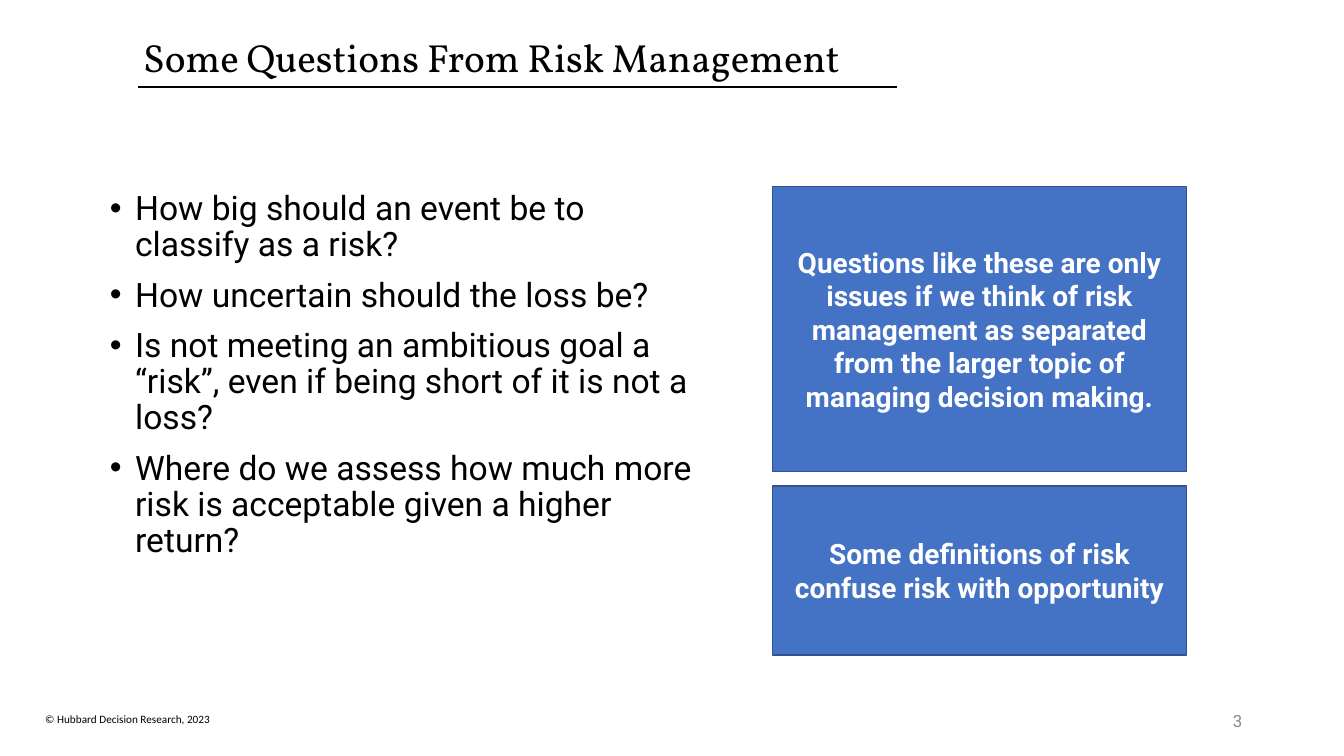
"""Build the slide of questions from risk management."""
from dataclasses import dataclass

from lxml import etree
from pptx import Presentation
from pptx.dml.color import RGBColor
from pptx.enum import shapes, text
from pptx.oxml import ns
from pptx.util import Inches, Pt

BLACK, WHITE, GREY = "000000", "FFFFFF", "888888"
BLUE, NAVY = "4472C4", "31538F"
ALIGN, ANCHOR, FIT = text.PP_ALIGN, text.MSO_ANCHOR, text.MSO_AUTO_SIZE
COLUMN_TOP = 1.85

QUESTIONS = [
    "How big should an event be to classify as a risk?",
    "How uncertain should the loss be?",
    "Is not meeting an ambitious goal a “risk”, even if being short of it is not a loss?",
    "Where do we assess how much more risk is acceptable given a higher return?",
]


@dataclass(frozen=True)
class Callout:
    """A remark in the right column."""
    remark: str
    top: float
    height: float


CALLOUTS = [
    Callout("Questions like these are only issues if we think of risk management "
            "as separated from the larger topic of managing decision making.",
            COLUMN_TOP, 2.83),
    Callout("Some definitions of risk confuse risk with opportunity", 4.82, 1.68),
]


def rgb(code: str) -> RGBColor:
    """Turn a hex string into a colour."""
    return RGBColor.from_string(code)


def place(shape, left: float, top: float, width: float, height: float) -> None:
    """Move and size a shape, in inches."""
    shape.left, shape.top = Inches(left), Inches(top)
    shape.width, shape.height = Inches(width), Inches(height)


def add_bullet(paragraph) -> None:
    """Give a paragraph a black bullet with a hanging indent."""
    props = paragraph._p.get_or_add_pPr()
    props.set("marL", str(Inches(0.25)))
    props.set("indent", str(-Inches(0.25)))
    colour = etree.SubElement(props, ns.qn("a:buClr"))
    etree.SubElement(colour, ns.qn("a:srgbClr"), val=BLACK)
    etree.SubElement(props, ns.qn("a:buFont"), typeface="Arial")
    etree.SubElement(props, ns.qn("a:buChar"), char="•")


def write(shape, *lines: str, size: float, font: str = "Roboto", color: str = BLACK,
          bold: bool = False, align=ALIGN.LEFT, anchor=ANCHOR.MIDDLE, fit=FIT.NONE,
          spacing: float = 1.0, gap: float = 0, bullets: bool = False) -> None:
    """Fill a shape with formatted paragraphs."""
    frame = shape.text_frame
    frame.word_wrap, frame.auto_size, frame.vertical_anchor = True, fit, anchor
    for index, line in enumerate(lines):
        paragraph = frame.add_paragraph() if index else frame.paragraphs[0]
        if bullets:
            add_bullet(paragraph)
        paragraph.alignment = align
        paragraph.line_spacing = spacing
        paragraph.space_before = Pt(gap if index else 0)
        run = paragraph.add_run()
        run.text = line
        run.font.name, run.font.size, run.font.bold = font, Pt(size), bold
        run.font.color.rgb = rgb(color)


def add_label(slide, left: float, top: float, width: float, height: float,
              label: str, **style) -> None:
    """Add a text box with one line."""
    box = slide.shapes.add_textbox(*map(Inches, (left, top, width, height)))
    write(box, label, **style)


def add_title_rule(slide) -> None:
    """Draw the line below the title."""
    rule = slide.shapes.add_connector(
        shapes.MSO_CONNECTOR.STRAIGHT, *map(Inches, (1.37, 0.86, 8.9, 0.86)))
    rule.line.color.rgb, rule.line.width = rgb(BLACK), Pt(1.5)
    etree.SubElement(rule._element.spPr, ns.qn("a:effectLst"))


def add_callout(slide, callout: Callout) -> None:
    """Draw a blue box with its remark."""
    box = slide.shapes.add_shape(
        shapes.MSO_SHAPE.RECTANGLE,
        *map(Inches, (7.66, callout.top, 4.11, callout.height)))
    box.shadow.inherit = False
    box.fill.solid()
    box.fill.fore_color.rgb = rgb(BLUE)
    box.line.color.rgb, box.line.width = rgb(NAVY), Pt(1)
    write(box, callout.remark, size=20, color=WHITE, bold=True, align=ALIGN.CENTER)


def main() -> None:
    """Build and save the slide."""
    deck = Presentation()
    deck.slide_width, deck.slide_height = Inches(13.33), Inches(7.5)
    slide = deck.slides.add_slide(deck.slide_layouts[1])

    add_label(slide, 0.35, 7.02, 2.5, 0.24, "© Hubbard Decision Research, 2023",
              size=8, font="Calibri", anchor=ANCHOR.TOP, fit=FIT.SHAPE_TO_FIT_TEXT)
    add_title_rule(slide)

    title, questions = slide.placeholders
    place(title, 1.32, 0.34, 8.15, 0.51)
    write(title, "Some Questions From Risk Management",
          size=28, font="Vollkorn", spacing=0.9)
    place(questions, 0.99, COLUMN_TOP, 6.06, 4.76)
    write(questions, *QUESTIONS, size=24, anchor=ANCHOR.TOP,
          spacing=0.9, gap=10, bullets=True)

    for callout in CALLOUTS:
        add_callout(slide, callout)
    add_label(slide, 9.42, 6.95, 3, 0.4, "3", size=12, color=GREY, align=ALIGN.RIGHT)
    deck.save("out.pptx")


if __name__ == "__main__":
    main()
